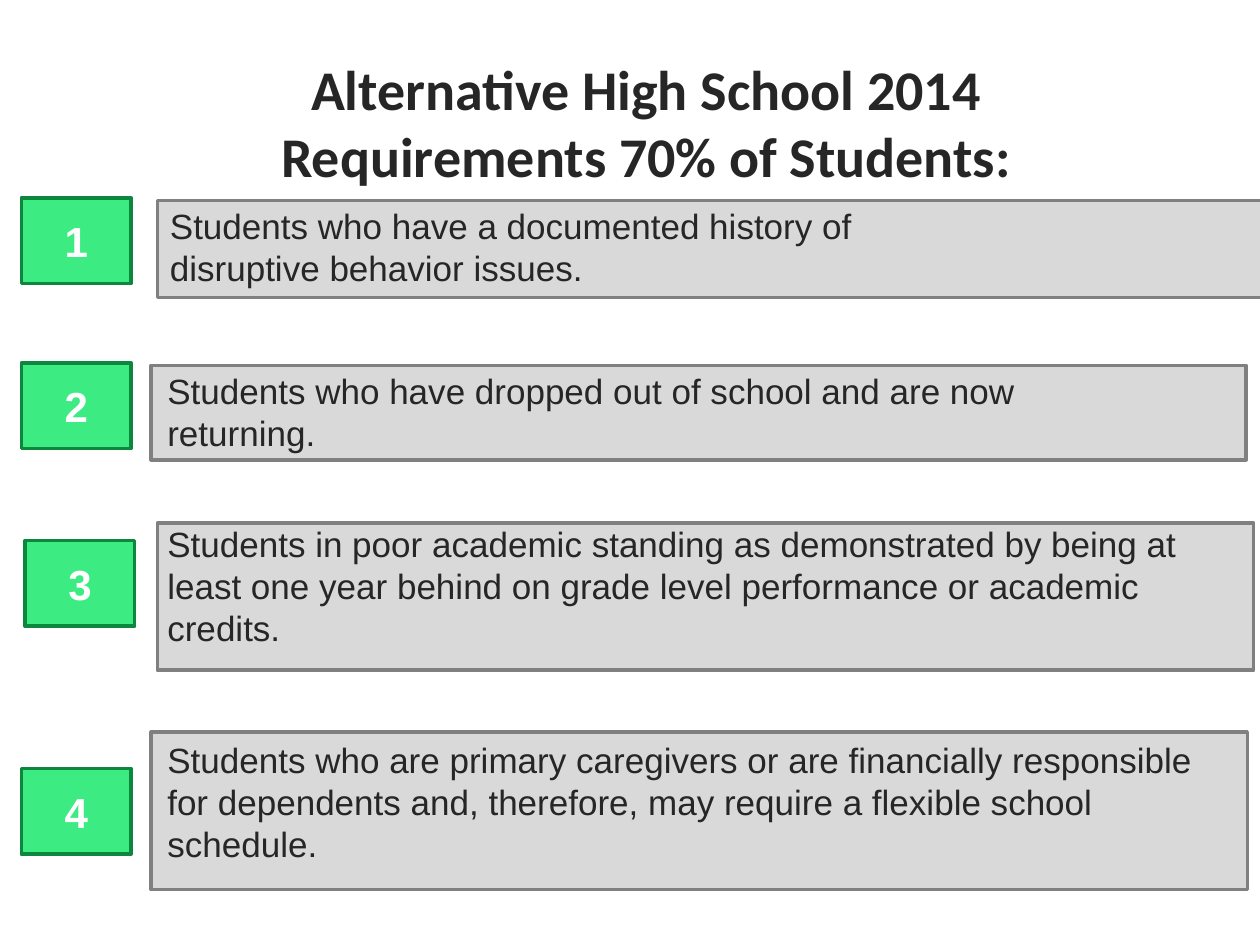
from pptx import Presentation
from pptx.dml.color import RGBColor
from pptx.enum.shapes import MSO_SHAPE as Shape
from pptx.enum.text import MSO_ANCHOR as Anchor, MSO_AUTO_SIZE as AutoSize, PP_ALIGN as Align
from pptx.util import Inches, Pt

INK = RGBColor(0x26, 0x26, 0x26)
WHITE = RGBColor(0xFF, 0xFF, 0xFF)
BAR_FILL = RGBColor(0xD9, 0xD9, 0xD9)
BAR_LINE = RGBColor(0x80, 0x80, 0x80)
BADGE_FILL = RGBColor(0x3C, 0xEC, 0x83)
BADGE_LINE = RGBColor(0x0D, 0x87, 0x3E)

deck = Presentation()
deck.slide_width, deck.slide_height = Inches(10), Inches(7.5)
slide = deck.slides.add_slide(deck.slide_layouts[5])

# Grid of 100 columns by 75 rows
COL = deck.slide_width / 100
ROW = deck.slide_height / 75


def place(left, top, width, height):
    """Turn grid columns and rows into slide lengths."""
    return [round(n * unit) for n, unit in zip((left, top, width, height), (COL, ROW) * 2)]


def write(frame, words, size, color, font="Arial", bold=False, align=Align.LEFT, anchor=Anchor.TOP):
    frame.word_wrap = True
    frame.auto_size = AutoSize.NONE
    frame.vertical_anchor = anchor
    paragraph = frame.paragraphs[0]
    paragraph.alignment = align
    run = paragraph.add_run()
    run.text = words
    run.font.name, run.font.size, run.font.bold = font, Pt(size), bold
    run.font.color.rgb = color


title = slide.shapes.title
title.left, title.top, title.width, title.height = place(14.2, 3.8, 74.2, 11.8)
write(title.text_frame, "Alternative High School 2014 Requirements 70% of Students:",
      32, INK, font="Calibri", bold=True, align=Align.CENTER)

# Requirement, its bar, its text area, and the badge's left and top
requirements = [
    ("Students who have a documented history of disruptive behavior issues.",
     (12.5, 15.9, 87.7, 7.7), (12.5, 15.7, 67.5, 7.7), (1.7, 15.7)),
    ("Students who have dropped out of school and are now returning.",
     (12, 29, 86.9, 7.5), (12.3, 28.8, 70, 7.7), (1.7, 28.8)),
    ("Students in poor academic standing as demonstrated by being at least one year "
     "behind on grade level performance or academic credits.",
     (12.5, 41.5, 87, 11.7), (12.3, 41, 84.3, 11.1), (2, 42.9)),
    ("Students who are primary caregivers or are financially responsible for dependents "
     "and, therefore, may require a flexible school schedule.",
     (12, 58.1, 87, 12.5), (12.3, 58.1, 85, 11.1), (1.7, 61)),
]

for number, (requirement, bar_area, text_area, badge_corner) in enumerate(requirements, 1):
    bar = slide.shapes.add_shape(Shape.RECTANGLE, *place(*bar_area))
    badge = slide.shapes.add_shape(Shape.RECTANGLE, *place(*badge_corner, 8.7, 6.8))
    for box, fill, line in ((bar, BAR_FILL, BAR_LINE), (badge, BADGE_FILL, BADGE_LINE)):
        box.shadow.inherit = False
        box.fill.solid()
        box.fill.fore_color.rgb = fill
        box.line.color.rgb = line
        box.line.width = Pt(2)
    write(badge.text_frame, str(number), 24, WHITE, bold=True,
          align=Align.CENTER, anchor=Anchor.MIDDLE)
    write(slide.shapes.add_textbox(*place(*text_area)).text_frame, requirement, 20, INK)

deck.save("out.pptx")
